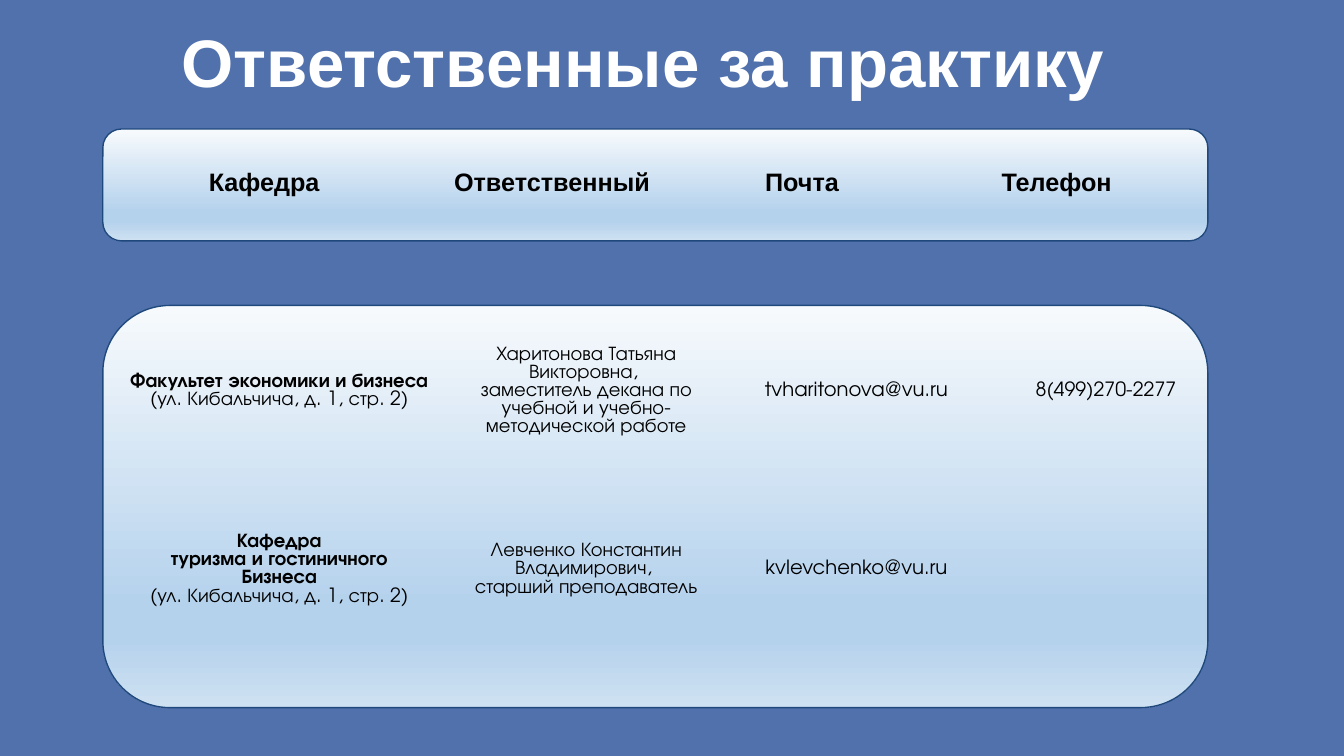
from lxml.etree import SubElement
from pptx import Presentation
from pptx.dml.color import RGBColor
from pptx.enum.shapes import MSO_SHAPE
from pptx.enum.text import MSO_ANCHOR, PP_ALIGN
from pptx.oxml.ns import qn
from pptx.util import Inches, Pt

TITLE = "Ответственные за практику"
ADDRESS = "(ул. Кибальчича, д. 1, стр. 2)"
EMPTY_ROW = [[], [], [], []]
HEADINGS = [["Кафедра"], ["Ответственный"], ["Почта"], ["Телефон"]]
FACULTY = [
    ["Факультет экономики и бизнеса", ADDRESS],
    ["Харитонова Татьяна Викторовна, ",
     "заместитель декана по учебной и учебно-методической работе"],
    ["tvharitonova@vu.ru"],
    ["8(499)270-2277"],
]
DEPARTMENT = [
    ["Кафедра", "туризма и гостиничного", "Бизнеса", ADDRESS],
    ["Левченко Константин Владимирович, ", "старший преподаватель"],
    ["kvlevchenko@vu.ru"],
    [],
]

HEADING_FONT = "Arial"
BODY_FONT = "TeX Gyre Adventor"
HEADING_WIDTHS = [3.2, 2.51, 2.45, 2.6]
BODY_WIDTHS = [3.28, 2.81, 2.55, 2.4]
TABLES = [
    ([HEADINGS, EMPTY_ROW], 1.02, 1.19, [1.24, 0.48], HEADING_WIDTHS, HEADING_FONT, 18),
    ([DEPARTMENT], 1.13, 4.75, [1.8], BODY_WIDTHS, BODY_FONT, 14),
    ([EMPTY_ROW], 0.88, 6.55, [0.95], BODY_WIDTHS, BODY_FONT, 14),
    ([FACULTY], 1.13, 3.24, [1.28], BODY_WIDTHS, BODY_FONT, 14),
]
PANELS = [(3.03, 3.99), (1.28, 1.11)]
PANEL_LEFT, PANEL_WIDTH = 1.02, 10.96

BACKGROUND = RGBColor(0x51, 0x71, 0xAC)
OUTLINE = RGBColor(0x1F, 0x49, 0x7D)
WHITE = RGBColor(0xFF, 0xFF, 0xFF)
BLACK = RGBColor(0, 0, 0)
PANEL_STOPS = [
    (0, RGBColor(0xF7, 0xFA, 0xFD)),
    (74, RGBColor(0xB5, 0xD2, 0xEC)),
    (83, RGBColor(0xB5, 0xD2, 0xEC)),
    (100, RGBColor(0xCE, 0xE1, 0xF2)),
]
PLAIN_TABLE_STYLE = "{2D5ABB26-0587-4C30-8999-92F81FD0307C}"


def set_font(paragraph, name, size, color, bold):
    font = paragraph.font
    font.name, font.size, font.bold = name, Pt(size), bold
    font.color.rgb = color


def add_panel(page, top, height):
    panel = page.shapes.add_shape(
        MSO_SHAPE.ROUNDED_RECTANGLE, Inches(PANEL_LEFT), Inches(top),
        Inches(PANEL_WIDTH), Inches(height))
    panel.shadow.inherit = False
    panel.line.color.rgb = OUTLINE
    panel.line.width = Pt(1)
    panel.fill.gradient()
    panel.fill.gradient_angle = 270
    stops = next(panel._element.iter(qn("a:gsLst")))
    for stop in list(stops):
        stops.remove(stop)
    for position, color in PANEL_STOPS:
        stop = SubElement(stops, qn("a:gs"), pos=str(position * 1000))
        SubElement(stop, qn("a:srgbClr"), val=str(color))


def fill_cell(cell, lines, font_name, size, is_first):
    cell.fill.background()
    cell.vertical_anchor = MSO_ANCHOR.MIDDLE
    cell.margin_left = cell.margin_right = Inches(0.1)
    cell.margin_top = cell.margin_bottom = Inches(0.1)
    cell.text = "\n".join(lines)
    for paragraph in cell.text_frame.paragraphs:
        paragraph.alignment = PP_ALIGN.CENTER
        bold = font_name == HEADING_FONT or (is_first and paragraph.text != ADDRESS)
        set_font(paragraph, font_name, size, BLACK, bold)


def add_contacts(page, rows, left, top, heights, widths, font_name, size):
    frame = page.shapes.add_table(
        len(rows), len(widths), Inches(left), Inches(top),
        Inches(sum(widths)), Inches(sum(heights)))
    next(frame._element.iter(qn("a:tableStyleId"))).text = PLAIN_TABLE_STYLE
    table = frame.table
    table.first_row = table.horz_banding = False
    for column, width in zip(table.columns, widths):
        column.width = Inches(width)
    for row, height, entries in zip(table.rows, heights, rows):
        row.height = Inches(height)
        for index, lines in enumerate(entries):
            fill_cell(row.cells[index], lines, font_name, size, index == 0)


def add_title(page):
    title = page.shapes.title
    title.left, title.top = Inches(1.7), Inches(0.21)
    title.width, title.height = Inches(11.23), Inches(0.89)
    title.text = TITLE
    title.text_frame.vertical_anchor = MSO_ANCHOR.MIDDLE
    paragraph = title.text_frame.paragraphs[0]
    paragraph.alignment = PP_ALIGN.LEFT
    paragraph.line_spacing = 0.9
    set_font(paragraph, HEADING_FONT, 48, WHITE, True)


def main():
    deck = Presentation()
    deck.slide_width, deck.slide_height = Inches(13.33), Inches(7.5)
    page = deck.slides.add_slide(deck.slide_layouts[5])
    page.background.fill.solid()
    page.background.fill.fore_color.rgb = BACKGROUND
    for top, height in PANELS:
        add_panel(page, top, height)
    add_title(page)
    for contacts in TABLES:
        add_contacts(page, *contacts)
    deck.save("out.pptx")


if __name__ == "__main__":
    main()
